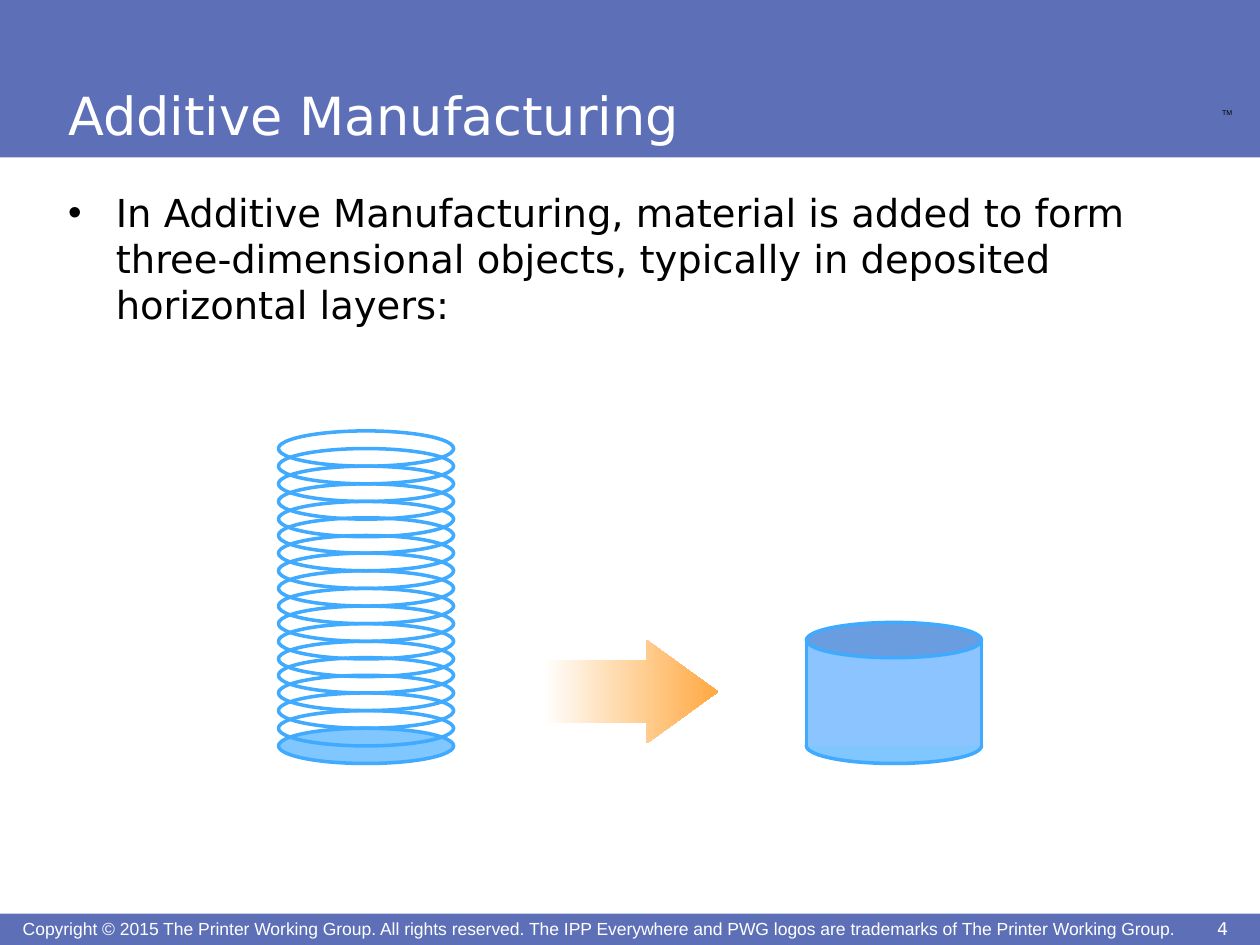
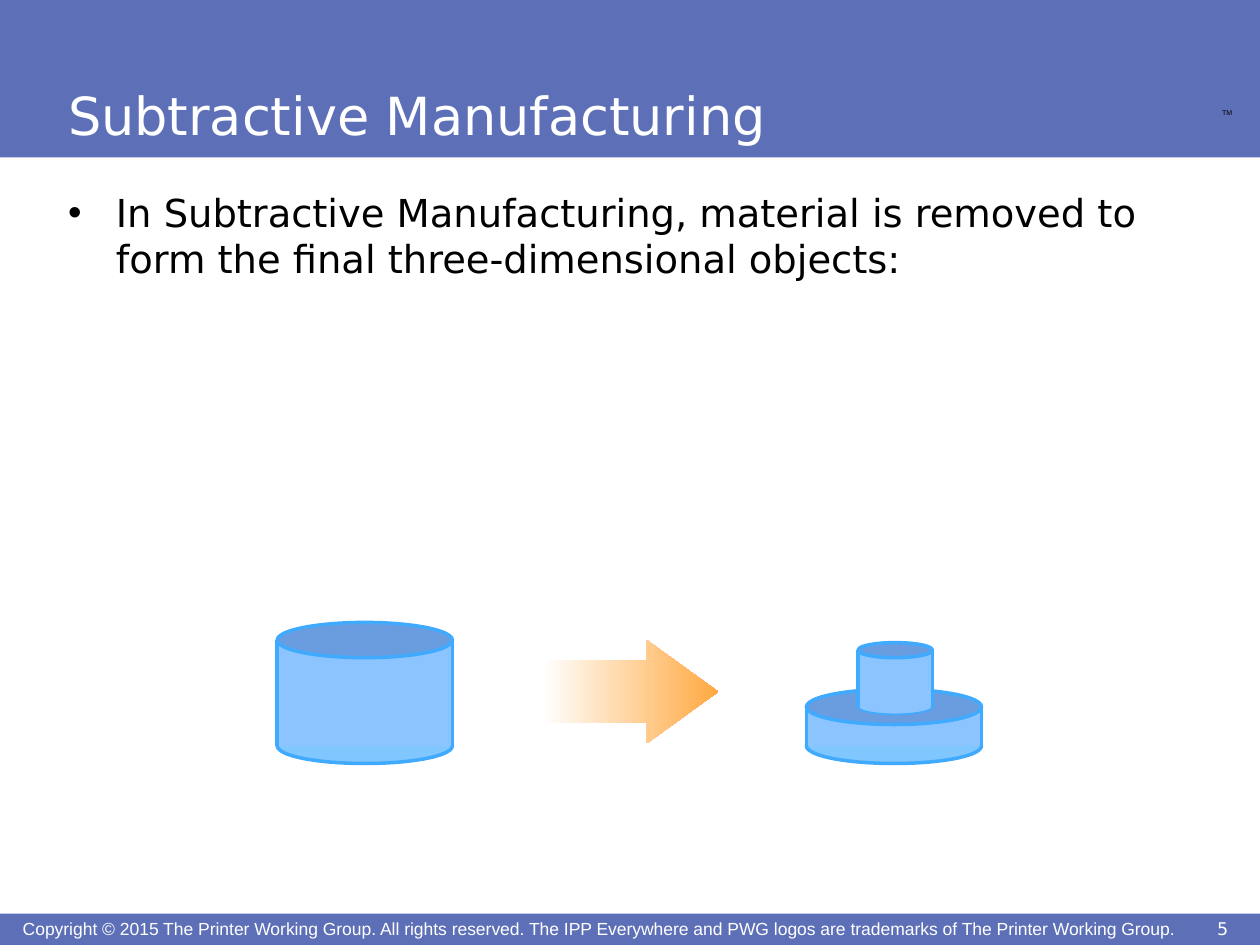
from dataclasses import dataclass

from lxml.etree import SubElement
from pptx import Presentation
from pptx.dml.color import RGBColor
from pptx.enum.shapes import MSO_CONNECTOR, MSO_SHAPE
from pptx.enum.text import MSO_ANCHOR, MSO_AUTO_SIZE, PP_ALIGN
from pptx.oxml.ns import qn
from pptx.util import Emu, Pt

EMU_PER_PX = 9144
PAGE_WIDTH, PAGE_HEIGHT = 1000, 750
TITLE_ONLY = 5

WHITE = RGBColor(0xFF, 0xFF, 0xFF)
BLACK = RGBColor(0x00, 0x00, 0x00)
BAND_BLUE = RGBColor(0x5D, 0x70, 0xB7)
EDGE_BLUE = RGBColor(0x40, 0xAA, 0xFF)
WALL_BLUE = RGBColor(0x8C, 0xC4, 0xFF)
LID_BLUE = RGBColor(0x69, 0x9D, 0xE0)
ARROW_ORANGE = RGBColor(0xFF, 0xA9, 0x41)

HEADING_FONT = "DejaVu Sans"
FOOTER_FONT = "Arial"
COPYRIGHT = (
    "Copyright © 2015 The Printer Working Group. All rights reserved. "
    "The IPP Everywhere and PWG logos are trademarks of The Printer Working Group."
)


@dataclass(frozen=True)
class Box:
    left: int
    top: int
    width: int
    height: int

    def emu(self) -> tuple:
        return tuple(px(value) for value in (self.left, self.top, self.width, self.height))


@dataclass(frozen=True)
class TextStyle:
    font: str
    size: int
    color: RGBColor
    anchor: MSO_ANCHOR = MSO_ANCHOR.TOP
    align: PP_ALIGN = PP_ALIGN.LEFT
    margin: int = 0
    indent: int = 0
    bullet: str = ""
    wrap: bool = True


@dataclass(frozen=True)
class Cylinder:
    left: int
    top: int
    base: int
    width: int = 139
    rim: int = 28
    base_fill: RGBColor = EDGE_BLUE
    base_opacity: int = 66
    base_line: int = 2


@dataclass(frozen=True)
class Topic:
    number: int
    title: str
    statement: str


TITLE_STYLE = TextStyle(HEADING_FONT, 30, WHITE, MSO_ANCHOR.BOTTOM, margin=4)
BODY_STYLE = TextStyle(HEADING_FONT, 22, BLACK, margin=42, indent=-38, bullet="•")
COPYRIGHT_STYLE = TextStyle(FOOTER_FONT, 10, WHITE, MSO_ANCHOR.MIDDLE, margin=4)
TRADEMARK_STYLE = TextStyle(FOOTER_FONT, 4, BLACK, margin=6, wrap=False)
NUMBER_STYLE = TextStyle(HEADING_FONT, 10, WHITE, MSO_ANCHOR.MIDDLE, PP_ALIGN.CENTER, wrap=False)

BANDS = (Box(0, 0, PAGE_WIDTH, 125), Box(0, 725, PAGE_WIDTH, 25))
TITLE_BOX = Box(50, 5, 828, 111)
BODY_BOX = Box(50, 150, 900, 575)
COPYRIGHT_BOX = Box(14, 729, 928, 15)
TRADEMARK_BOX = Box(964, 86, 27, 18)
NUMBER_BOX = Box(962, 729, 17, 15)
ARROW_BOX = Box(431, 508, 139, 82)

LAYER_COUNT = 18
LAYER_LEFT, LAYER_TOP, LAYER_BASE = 221, 342, 578

FINISHED_PART = Cylinder(640, 494, 578)
RAW_BLOCK = Cylinder(220, 494, 578)
FLANGE = Cylinder(640, 547, 578)
BOSS = Cylinder(681, 510, 555, 59, 12, WALL_BLUE, 100, 1)

ADDITIVE = Topic(
    4,
    "Additive Manufacturing",
    "In Additive Manufacturing, material is added to form three-dimensional "
    "objects, typically in deposited horizontal layers:",
)
SUBTRACTIVE = Topic(
    5,
    "Subtractive Manufacturing",
    "In Subtractive Manufacturing, material is removed to form the final "
    "three-dimensional objects:",
)


def px(value: int) -> Emu:
    return Emu(value * EMU_PER_PX)


def write_text(shape, text: str, style: TextStyle) -> None:
    frame = shape.text_frame
    frame.auto_size = MSO_AUTO_SIZE.NONE
    frame.word_wrap = style.wrap
    frame.vertical_anchor = style.anchor
    frame.margin_left = frame.margin_right = frame.margin_top = frame.margin_bottom = 0
    para = frame.paragraphs[0]
    para.alignment = style.align
    properties = para._p.get_or_add_pPr()
    properties.set("marL", str(px(style.margin)))
    properties.set("indent", str(px(style.indent)))
    if style.bullet:
        SubElement(properties, qn("a:buFont"), typeface=FOOTER_FONT)
        SubElement(properties, qn("a:buChar"), char=style.bullet)
    span = para.add_run()
    span.text = text
    span.font.name = style.font
    span.font.size = Pt(style.size)
    span.font.color.rgb = style.color


def add_label(page, box: Box, text: str, style: TextStyle) -> None:
    write_text(page.shapes.add_textbox(*box.emu()), text, style)


def add_block(shapes, kind: MSO_SHAPE, box: Box, fill: RGBColor | None, line: int = 0):
    shape = shapes.add_shape(kind, *box.emu())
    shape.shadow.inherit = False
    if fill is None:
        shape.fill.background()
    else:
        shape.fill.solid()
        shape.fill.fore_color.rgb = fill
    if line:
        shape.line.color.rgb = EDGE_BLUE
        shape.line.width = Pt(line)
    else:
        shape.line.fill.background()
    return shape


def set_opacity(shape, percent: int) -> None:
    color = shape.element.spPr.find(qn("a:solidFill")).find(qn("a:srgbClr"))
    SubElement(color, qn("a:alpha"), val=str(percent * 1000))


def add_edge(shapes, x: int, top: int, bottom: int) -> None:
    edge = shapes.add_connector(MSO_CONNECTOR.STRAIGHT, px(x), px(top), px(x), px(bottom))
    edge.line.color.rgb = EDGE_BLUE
    edge.line.width = Pt(2)
    SubElement(edge.element.spPr, qn("a:effectLst"))


def add_cylinders(page, *cylinders: Cylinder) -> None:
    shapes = page.shapes.add_group_shape().shapes
    for part in cylinders:
        wall_top = part.top + part.rim // 2
        wall_bottom = part.base + part.rim // 2
        base_box = Box(part.left, part.base, part.width, part.rim)
        wall_box = Box(part.left, wall_top, part.width, wall_bottom - wall_top)
        lid_box = Box(part.left, part.top, part.width, part.rim)
        base = add_block(shapes, MSO_SHAPE.OVAL, base_box, part.base_fill, part.base_line)
        set_opacity(base, part.base_opacity)
        add_block(shapes, MSO_SHAPE.RECTANGLE, wall_box, WALL_BLUE)
        add_block(shapes, MSO_SHAPE.OVAL, lid_box, LID_BLUE, 2)
        for x in (part.left, part.left + part.width):
            add_edge(shapes, x, wall_top, wall_bottom)


def add_layers(page) -> None:
    shapes = page.shapes.add_group_shape().shapes
    rise = (LAYER_BASE - LAYER_TOP) / (LAYER_COUNT - 1)
    for index in range(LAYER_COUNT):
        box = Box(LAYER_LEFT, LAYER_BASE - round(index * rise), 139, 28)
        layer = add_block(shapes, MSO_SHAPE.OVAL, box, None if index else EDGE_BLUE, 2)
        if index == 0:
            set_opacity(layer, 66)


def add_process_arrow(page) -> None:
    arrow = add_block(page.shapes, MSO_SHAPE.RIGHT_ARROW, ARROW_BOX, WHITE)
    arrow.adjustments[0] = 0.6
    arrow.adjustments[1] = 0.69
    arrow.fill.gradient()
    arrow.fill.gradient_angle = 0
    for stop, position, color in zip(arrow.fill.gradient_stops, (0, 1), (WHITE, ARROW_ORANGE)):
        stop.position = position
        stop.color.rgb = color


def add_page(deck, topic: Topic):
    page = deck.slides.add_slide(deck.slide_layouts[TITLE_ONLY])
    for band in BANDS:
        add_block(page.shapes, MSO_SHAPE.RECTANGLE, band, BAND_BLUE)
    add_label(page, COPYRIGHT_BOX, COPYRIGHT, COPYRIGHT_STYLE)
    add_label(page, TRADEMARK_BOX, "TM", TRADEMARK_STYLE)
    title = page.shapes.title
    title.left, title.top, title.width, title.height = TITLE_BOX.emu()
    write_text(title, topic.title, TITLE_STYLE)
    title.element.getparent().append(title.element)
    add_label(page, BODY_BOX, topic.statement, BODY_STYLE)
    add_label(page, NUMBER_BOX, str(topic.number), NUMBER_STYLE)
    add_process_arrow(page)
    return page


def main() -> None:
    deck = Presentation()
    deck.slide_width, deck.slide_height = px(PAGE_WIDTH), px(PAGE_HEIGHT)

    additive = add_page(deck, ADDITIVE)
    add_layers(additive)
    add_cylinders(additive, FINISHED_PART)

    subtractive = add_page(deck, SUBTRACTIVE)
    add_cylinders(subtractive, RAW_BLOCK)
    add_cylinders(subtractive, FLANGE, BOSS)

    deck.save("out.pptx")


if __name__ == "__main__":
    main()
